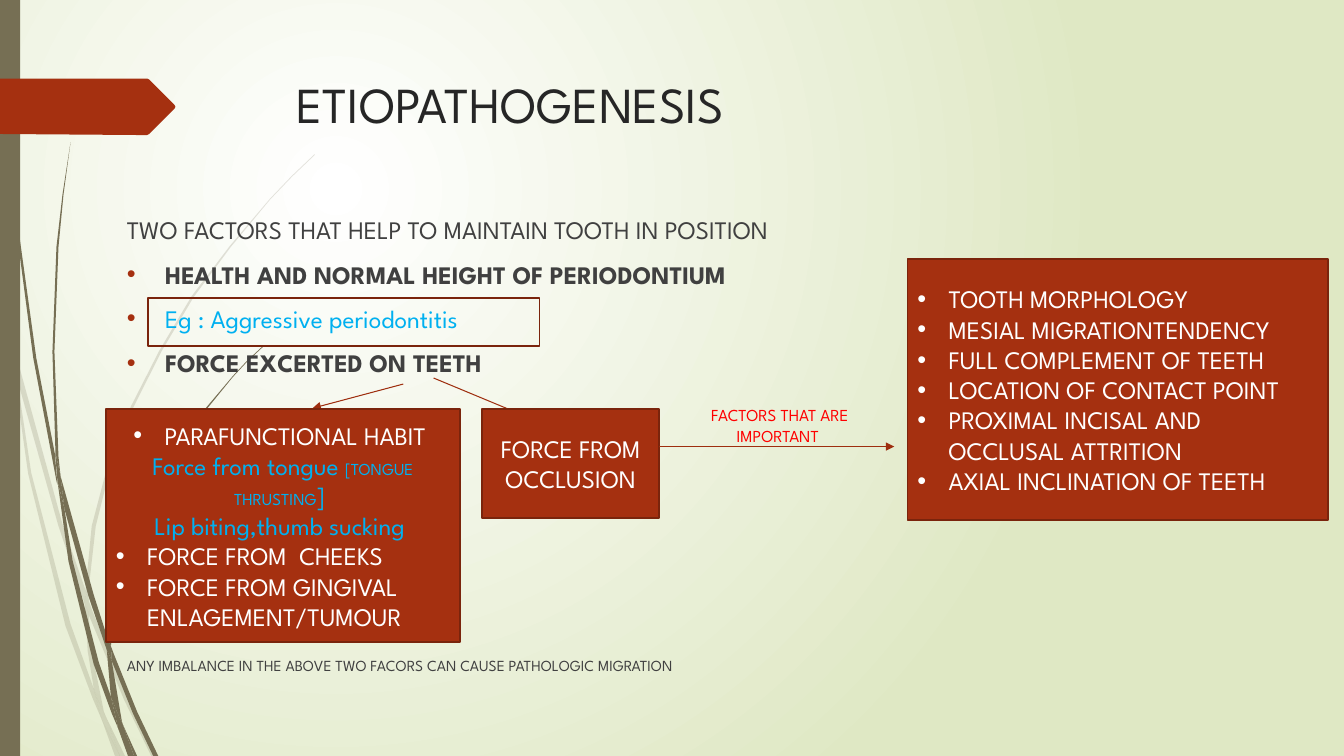
import pptx
import pptx.dml.color
import pptx.enum.shapes
import pptx.enum.text
import pptx.util
from lxml import etree
from pptx.oxml.ns import qn
from pptx.util import Inches

FONT = "League Spartan"
OLIVE, RUST, RUST_EDGE, RUST_ARROW = "766F54", "A53010", "7A240C", "9E2E0F"
WHITE, SKY, RED, INK, GREY = "FFFFFF", "00B0F0", "FF0000", "262626", "404040"

# Outlines in inches: the pale grass blades, then the dark ones
PALE_BLADES = [
    [(0.11, 3.5), (0.09, 3.22), (0, 2.82), (0, 2.99), (0.1, 3.44)],
    [(0.58, 5.22), (0.84, 5.99), (0.85, 5.86), (0.62, 5.2), (0.14, 3.45), (0.17, 3.76)],
    [(0.92, 6.07), (0.88, 5.96), (0.88, 6.1), (1.23, 6.94), (1.5, 7.5), (1.55, 7.5), (1.27, 6.92)],
    [(1.19, 7.5), (1.24, 7.5), (1.05, 7.11)],
    [(0.93, 6.83), (0.7, 6.19), (0.31, 4.69), (0.17, 3.76), (0.11, 3.5), (0.28, 4.7),
     (0.65, 6.21), (0.92, 6.93), (1.01, 7.14), (0.99, 7.07)],
    [(0.84, 5.99), (0.87, 6.46), (0.93, 6.83), (0.96, 6.92), (1.05, 7.11), (1.03, 7.06),
     (0.91, 6.46), (0.88, 6.1), (0.88, 6.08)],
    [(0.88, 5.84), (0.95, 5.22), (1.1, 4.62), (1.32, 4.05), (1.6, 3.49), (1.92, 2.95),
     (2.29, 2.45), (2.68, 1.98), (2.9, 1.75), (3.12, 1.54), (3.12, 1.53), (2.89, 1.75),
     (2.68, 1.97), (2.28, 2.44), (1.9, 2.94), (1.58, 3.48), (1.3, 4.03), (1.07, 4.61),
     (0.91, 5.22), (0.85, 5.84), (0.85, 5.86), (0.88, 5.96)],
    [(1.01, 7.14), (1.14, 7.5), (1.19, 7.5)],
    [(0.88, 6.08), (0.88, 6.1), (0.88, 5.96), (0.85, 5.86), (0.84, 5.99)],
    [(0.96, 6.92), (0.93, 6.83), (0.99, 7.07), (1.01, 7.14), (1.19, 7.5), (1.05, 7.11)],
]
DARK_BLADES = [
    [(0.07, 1.1), (0.17, 2.33), (0.33, 3.55), (0.56, 4.77), (0.57, 4.81), (0.55, 4.57),
     (0.55, 4.53), (0.36, 3.55), (0.19, 2.32), (0.08, 1.09), (0.05, 0.48), (0.04, 0),
     (0.03, 0), (0.04, 0.48)],
    [(0.88, 5.92), (1.06, 6.45), (1.06, 6.33), (1.06, 6.31), (0.93, 5.9), (0.6, 4.72), (0.64, 5.05)],
    [(1.13, 6.49), (1.1, 6.41), (1.11, 6.56), (1.32, 7.08), (1.52, 7.5), (1.57, 7.5), (1.36, 7.06)],
    [(1.1, 6.91), (0.98, 6.57), (0.72, 5.56), (0.64, 5.05), (0.57, 4.77), (0.68, 5.57),
     (0.93, 6.59), (1.11, 7.08), (1.17, 7.22), (1.16, 7.17)],
    [(0.6, 4.72), (0.58, 4.53), (0.54, 3.49), (0.58, 2.45), (0.63, 1.93), (0.7, 1.41),
     (0.62, 1.93), (0.56, 2.45), (0.52, 3.49), (0.55, 4.49)],
    [(1.33, 7.5), (1.36, 7.5), (1.22, 7.19)],
    [(0.57, 4.77), (0.64, 5.05), (0.6, 4.72), (0.55, 4.49), (0.55, 4.53)],
    [(1.11, 6.33), (1.15, 5.92), (1.25, 5.52), (1.58, 4.76), (1.8, 4.4), (2.05, 4.06),
     (2.31, 3.74), (2.45, 3.59), (2.61, 3.44), (2.6, 3.44), (2.45, 3.58), (2.31, 3.73),
     (2.04, 4.05), (1.78, 4.38), (1.56, 4.74), (1.22, 5.51), (1.11, 5.91), (1.06, 6.31), (1.1, 6.41)],
    [(1.17, 7.22), (1.27, 7.5), (1.31, 7.5)],
    [(1.06, 6.45), (1.1, 6.91), (1.16, 7.06), (1.22, 7.19), (1.21, 7.16), (1.11, 6.56), (1.09, 6.51)],
    [(1.06, 6.45), (1.09, 6.51), (1.11, 6.56), (1.1, 6.41), (1.06, 6.31), (1.06, 6.33)],
    [(1.16, 7.06), (1.1, 6.91), (1.16, 7.17), (1.17, 7.22), (1.3, 7.5), (1.33, 7.5), (1.22, 7.19)],
]
TITLE_TAG = [(0, 0.78), (1.46, 0.78), (1.48, 0.79), (1.73, 1.04), (1.74, 1.06), (1.73, 1.08),
             (1.48, 1.33), (1.46, 1.34), (1.36, 1.34), (0, 1.33)]

# Each paragraph: runs of (text, size), then its format
FACTOR = dict(color=GREY, bold=True, before=10, indent=0.38, bullet_color=RUST)
CENTERED = dict(color=WHITE, center=True)
BULLETED = dict(color=WHITE, indent=0.31)
TITLE = [([("ETIOPATHOGENESIS", 36)], dict(color=INK))]
BODY = [
    ([("TWO FACTORS THAT HELP TO MAINTAIN TOOTH IN POSITION", 18)], dict(color=GREY)),
    ([("HEALTH AND NORMAL HEIGHT OF PERIODONTIUM", 18)], FACTOR),
    ([("Eg : Aggressive periodontitis", 18)], FACTOR | dict(color=SKY, bold=False)),
    ([("FORCE EXCERTED ON TEETH", 18)], FACTOR),
    ([("ANY IMBALANCE IN THE ABOVE TWO FACORS CAN CAUSE PATHOLOGIC MIGRATION", 11)],
     dict(color=GREY, before=199)),
]
OCCLUSION = [([("FORCE FROM OCCLUSION", 18)], CENTERED)]
HABITS = [
    ([("PARAFUNCTIONAL HABIT ", 18)], BULLETED | CENTERED),
    ([("Force from tongue ", 18), ("[TONGUE THRUSTING", 12), ("] ", 18)], CENTERED | dict(color=SKY)),
    ([("Lip biting,thumb sucking ", 18)], CENTERED | dict(color=SKY)),
    ([("FORCE FROM  CHEEKS", 18)], BULLETED),
    ([("FORCE FROM GINGIVAL ENLAGEMENT/TUMOUR", 18)], BULLETED),
]
IMPORTANT_FACTORS = [([(text, 18)], BULLETED) for text in (
    "TOOTH MORPHOLOGY", "MESIAL MIGRATIONTENDENCY", "FULL COMPLEMENT OF TEETH",
    "LOCATION OF CONTACT POINT", "PROXIMAL INCISAL AND OCCLUSAL ATTRITION",
    "AXIAL INCLINATION OF TEETH")]
ARROW_LABEL = [([("FACTORS THAT ARE IMPORTANT ", 12)], dict(color=RED, center=True))]


def rgb(color):
    return pptx.dml.color.RGBColor.from_string(color)


def add_bullet(paragraph, indent, color):
    properties = paragraph._p.get_or_add_pPr()
    properties.set("marL", str(Inches(indent)))
    properties.set("indent", str(-Inches(indent)))
    if color:
        bullet_color = etree.SubElement(properties, qn("a:buClr"))
        etree.SubElement(bullet_color, qn("a:srgbClr"), val=color)
    etree.SubElement(properties, qn("a:buFont"), typeface="Arial")
    etree.SubElement(properties, qn("a:buChar"), char="•")


def write(shape, paragraphs, middle=True):
    frame, anchors = shape.text_frame, pptx.enum.text.MSO_ANCHOR
    frame.word_wrap = True
    frame.vertical_anchor = anchors.MIDDLE if middle else anchors.TOP
    alignments = pptx.enum.text.PP_ALIGN
    for index, (runs, look) in enumerate(paragraphs):
        paragraph = frame.add_paragraph() if index else frame.paragraphs[0]
        if "indent" in look:
            add_bullet(paragraph, look["indent"], look.get("bullet_color"))
        paragraph.alignment = alignments.CENTER if look.get("center") else alignments.LEFT
        if "before" in look:
            paragraph.space_before = pptx.util.Pt(look["before"])
        font = paragraph.font
        font.name, font.size = FONT, pptx.util.Pt(runs[0][1])
        font.bold = look.get("bold", False)
        font.color.rgb = rgb(look["color"])
        for text, size in runs:
            run = paragraph.add_run()
            run.text = text
            if len(runs) > 1:
                run.font.size = pptx.util.Pt(size)


def paint(shape, fill=None, line=None):
    shape.shadow.inherit = False
    if fill:
        shape.fill.solid()
        shape.fill.fore_color.rgb = rgb(fill)
    else:
        shape.fill.background()
    if line:
        shape.line.color.rgb = rgb(line)
        shape.line.width = pptx.util.Pt(1.25)
    else:
        shape.line.fill.background()


def add_outline(slide, points, color, opacity=100):
    start, *others = [(round(x * 100), round(y * 100)) for x, y in points]
    builder = slide.shapes.build_freeform(*start, scale=Inches(0.01))
    builder.add_line_segments(others, close=True)
    shape = builder.convert_to_shape()
    paint(shape, color)
    if opacity < 100:
        fill_color = shape._element.spPr.find(qn("a:solidFill"))[0]
        etree.SubElement(fill_color, qn("a:alpha"), val=str(opacity * 1000))


def add_box(slide, place, fill=None, line=None, paragraphs=()):
    shape = slide.shapes.add_shape(pptx.enum.shapes.MSO_SHAPE.RECTANGLE, *map(Inches, place))
    paint(shape, fill, line)
    if paragraphs:
        write(shape, paragraphs)


def add_arrow(slide, *ends):
    arrow = slide.shapes.add_connector(pptx.enum.shapes.MSO_CONNECTOR.STRAIGHT, *map(Inches, ends))
    arrow.line.color.rgb = rgb(RUST_ARROW)
    arrow.line.width = pptx.util.Pt(0.75)
    etree.SubElement(arrow.line._get_or_add_ln(), qn("a:tailEnd"), type="triangle")
    etree.SubElement(arrow._element.spPr, qn("a:effectLst"))


def set_background(slide):
    """White glow a quarter of the way in, fading to pale green."""
    fill = slide.background.fill
    fill.gradient()
    for stop, color in zip(fill.gradient_stops, (WHITE, "DFE8C4")):
        stop.color.rgb = rgb(color)
    gradient = slide._element.find(".//" + qn("a:gradFill"))
    gradient.remove(gradient.find(qn("a:lin")))
    glow = etree.SubElement(gradient, qn("a:path"))
    glow.set("path", "circle")
    etree.SubElement(glow, qn("a:fillToRect"), l="50000", t="50000", r="100000", b="100000")


presentation = pptx.Presentation()
presentation.slide_width, presentation.slide_height = Inches(13.33), Inches(7.5)
slide = presentation.slides.add_slide(presentation.slide_layouts[6])
set_background(slide)
for blades, opacity in ((PALE_BLADES, 20), (DARK_BLADES, 100)):
    for blade in blades:
        add_outline(slide, blade, OLIVE, opacity)
add_box(slide, (0, 0, 0.2, 7.5), OLIVE)
add_outline(slide, TITLE_TAG, RUST)
for place, paragraphs in (((2.84, 0.68, 9.75, 1.4), TITLE), ((1.16, 2.08, 9.75, 5.13), BODY)):
    write(slide.shapes.add_textbox(*map(Inches, place)), paragraphs, middle=False)
add_arrow(slide, 4, 3.81, 3.1, 4.05)
add_arrow(slide, 4.3, 3.75, 5.43, 4.22)
add_box(slide, (4.78, 4.06, 1.76, 1.08), RUST, RUST_EDGE, OCCLUSION)
add_box(slide, (1.05, 4.06, 3.51, 2.31), RUST, RUST_EDGE, HABITS)
add_arrow(slide, 6.54, 4.43, 8.87, 4.43)
add_box(slide, (9, 2.57, 4.17, 2.59), RUST, RUST_EDGE, IMPORTANT_FACTORS)
write(slide.shapes.add_textbox(*map(Inches, (6.93, 3.44, 1.61, 1.56))), ARROW_LABEL)
add_box(slide, (1.47, 2.96, 3.88, 0.47), line=RUST_EDGE)
presentation.save("out.pptx")
